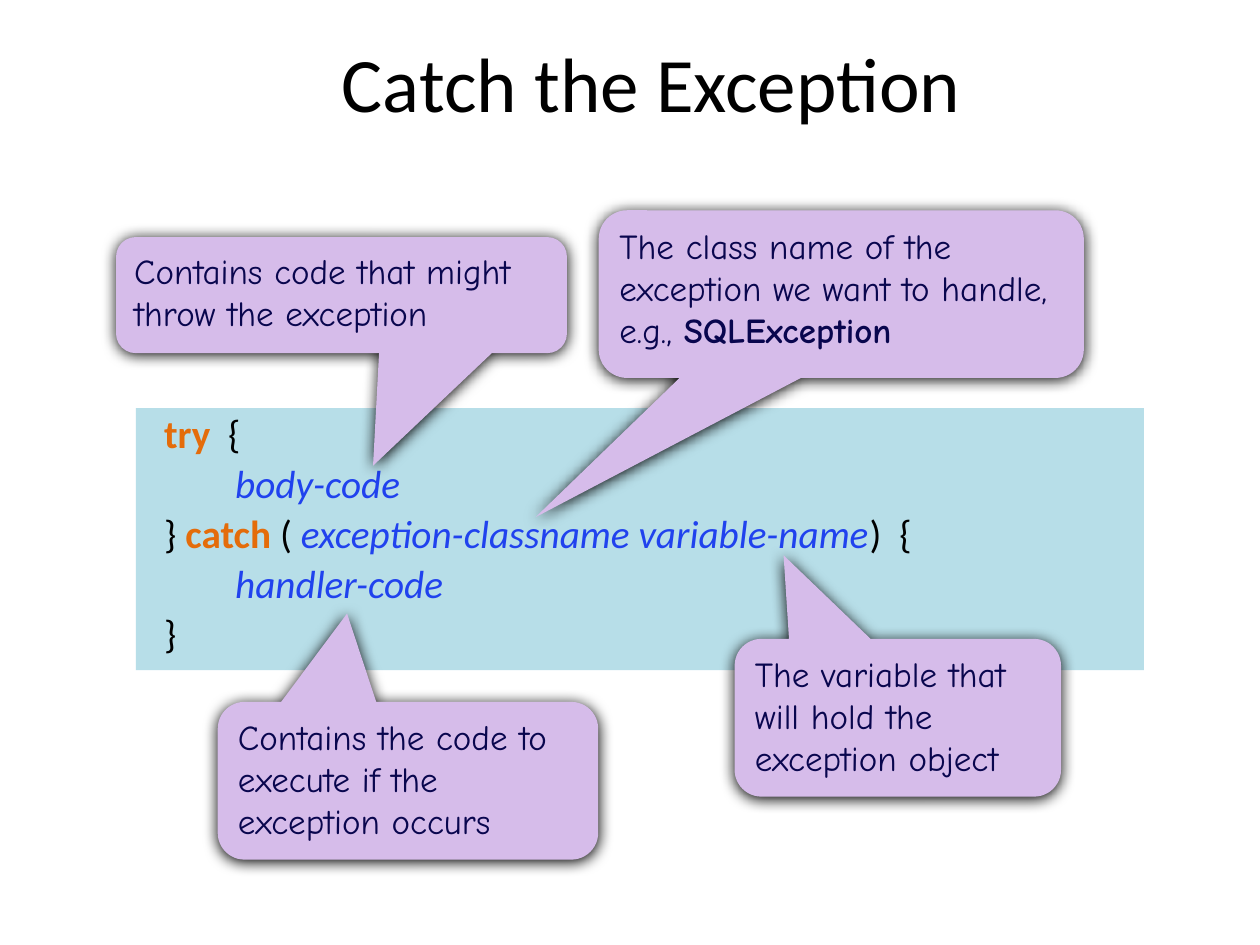
from lxml.etree import SubElement
from pptx import Presentation
from pptx.dml.color import RGBColor
from pptx.enum.shapes import MSO_SHAPE
from pptx.enum.text import MSO_ANCHOR, PP_ALIGN
from pptx.oxml.ns import qn
from pptx.util import Cm, Pt

# Content: boxes are left, top, width, height in cm
TITLE = ("Catch the Exception", (2.34, 0.53, 21.59, 2.24))
CODE_BOX = (2.74, 8.23, 20.32, 5.28)
CODE = [
    [("try", "keyword"), ("  {", "code")],
    [("        ", "code"), ("body-code", "slot")],
    [("} ", "code"), ("catch", "keyword"), (" ( ", "code"),
     ("exception-classname variable-name", "slot"), (")  {", "code")],
    [("        ", "code"), ("handler-code", "slot")],
    [("}", "code")],
]
# Box, pointer tip (offset from centre as a share of the size), runs
CALLOUTS = [
    ((2.34, 4.78, 9.09, 2.34), (0.07, 1.47),
     [("Contains code that might throw the exception", "note")]),
    ((12.07, 4.24, 9.78, 3.38), (-0.63, 1.33),
     [("The class name of the exception we want to handle, e.g., ", "note"),
      ("SQLException", "note_bold")]),
    ((14.81, 12.88, 6.58, 3.18), (-0.35, -1.03),
     [("The variable that will hold the exception object", "note")]),
    ((4.39, 14.15, 7.67, 3.18), (-0.16, -1.06),
     [("Contains the code to execute if the exception occurs", "note")]),
]

# Theme
CODE_FONT = {"name": "Calibri", "size": Pt(22.4), "bold": False, "italic": False}
NOTE_FONT = {"name": "Comic Neue", "size": Pt(20), "bold": False, "color": "09064E"}
THEME = {
    "panel": "B7DEE8",
    "bubble": "D6BCEA",
    "shadow": "000000",
    "title": {"name": "Calibri", "size": Pt(44), "color": "000000"},
    "code": {**CODE_FONT, "color": "000000"},
    "keyword": {**CODE_FONT, "bold": True, "color": "E46C0A"},
    "slot": {**CODE_FONT, "italic": True, "color": "2042EE"},
    "note": NOTE_FONT,
    "note_bold": {**NOTE_FONT, "bold": True},
}


def add_runs(p, runs):
    for text, style in runs:
        r = p.add_run()
        r.text = text
        for key, value in THEME[style].items():
            if key == "color":
                r.font.color.rgb = RGBColor.from_string(value)
            else:
                setattr(r.font, key, value)


def add_panel(s, kind, box, fill):
    sp = s.shapes.add_shape(kind, *map(Cm, box))
    sp.shadow.inherit = False
    sp.fill.solid()
    sp.fill.fore_color.rgb = RGBColor.from_string(fill)
    sp.line.fill.background()
    tf = sp.text_frame
    tf.word_wrap = True
    tf.vertical_anchor = MSO_ANCHOR.TOP
    tf.paragraphs[0].alignment = PP_ALIGN.LEFT
    return sp


def add_shadow(sp):
    effects = sp._element.spPr.find(qn("a:effectLst"))
    shadow = SubElement(effects, qn("a:outerShdw"), blurRad=str(Pt(8.5)),
                        dist=str(Pt(1)), dir="5400000", rotWithShape="0")
    SubElement(shadow, qn("a:srgbClr"), val=THEME["shadow"])


prs = Presentation()
prs.slide_width, prs.slide_height = Cm(25.4), Cm(19.05)
s = prs.slides.add_slide(prs.slide_layouts[6])

# Title
text, box = TITLE
tf = s.shapes.add_textbox(*map(Cm, box)).text_frame
tf.word_wrap = True
tf.vertical_anchor = MSO_ANCHOR.MIDDLE
p = tf.paragraphs[0]
p.alignment = PP_ALIGN.CENTER
add_runs(p, [(text, "title")])

# Code panel
tf = add_panel(s, MSO_SHAPE.RECTANGLE, CODE_BOX, THEME["panel"]).text_frame
for i, runs in enumerate(CODE):
    p = tf.add_paragraph() if i else tf.paragraphs[0]
    p.alignment = PP_ALIGN.LEFT
    p.line_spacing = Pt(24)
    p.space_before = Pt(4.5 if i else 0)
    pPr = p._p.get_or_add_pPr()
    pPr.set("marL", str(Cm(0.96)))
    pPr.set("indent", str(Cm(-0.64)))
    add_runs(p, runs)

# Callouts
for box, tip, runs in CALLOUTS:
    sp = add_panel(s, MSO_SHAPE.ROUNDED_RECTANGULAR_CALLOUT, box, THEME["bubble"])
    for i, value in enumerate((*tip, 0.17)):
        sp.adjustments[i] = value
    add_shadow(sp)
    add_runs(sp.text_frame.paragraphs[0], runs)

prs.save("out.pptx")
